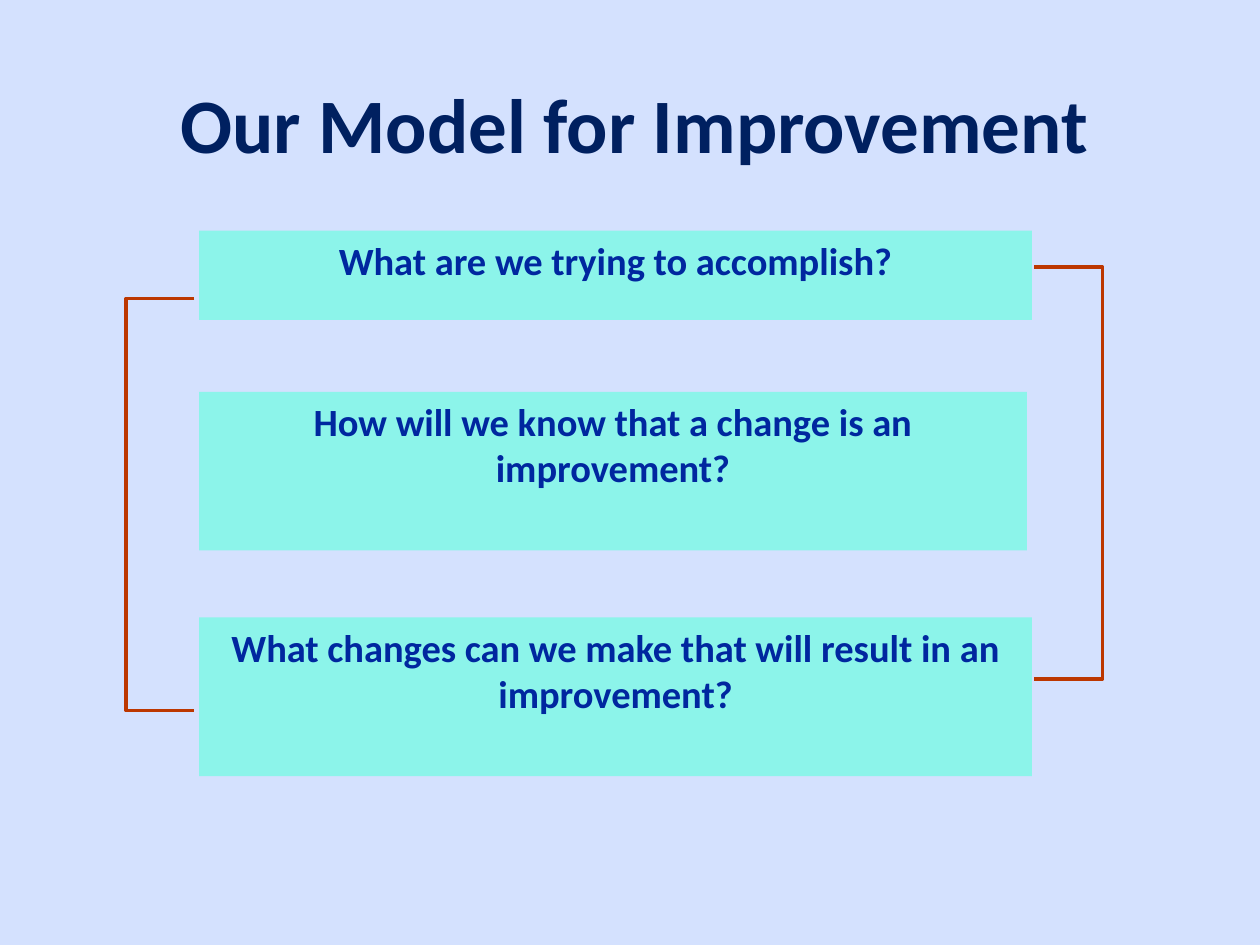
from pptx import Presentation
from pptx.dml.color import RGBColor
from pptx.enum.shapes import MSO_SHAPE
from pptx.enum.text import MSO_ANCHOR, PP_ALIGN
from pptx.util import Inches, Pt

RECT = MSO_SHAPE.RECTANGLE
TOP, MIDDLE = MSO_ANCHOR.TOP, MSO_ANCHOR.MIDDLE
CENTER = PP_ALIGN.CENTER


def color(code):
    return RGBColor.from_string(code)


def write(frame, text, size=22, ink="00279F", font="Calibri", anchor=TOP):
    frame.word_wrap = True
    frame.vertical_anchor = anchor
    para = frame.paragraphs[0]
    para.alignment = CENTER
    run = para.add_run()
    run.text = text
    run.font.name = font
    run.font.size = Pt(size)
    run.font.bold = True
    run.font.color.rgb = color(ink)


class Board:
    back, navy, aqua, rust = "D4E1FE", "002060", "8CF4EA", "BC3700"

    def __init__(self, deck):
        self.slide = deck.slides.add_slide(deck.slide_layouts[6])
        fill = self.slide.background.fill
        fill.solid()
        fill.fore_color.rgb = color(self.back)

    def title(self, text, *place):
        box = self.slide.shapes.add_textbox(*map(Inches, place))
        write(box.text_frame, text, size=44, ink=self.navy, anchor=MIDDLE)

    def panel(self, text, *place):
        box = self.slide.shapes.add_shape(RECT, *map(Inches, place))
        box.shadow.inherit = False
        box.fill.solid()
        box.fill.fore_color.rgb = color(self.aqua)
        box.line.fill.background()
        write(box.text_frame, text)

    def bracket(self, inner, outer, top, height=3.27):
        low = top + height
        points = [(inner, top), (outer, top), (outer, low), (inner, low)]
        start, *rest = [(Inches(x), Inches(y)) for x, y in points]
        pen = self.slide.shapes.build_freeform(*start)
        pen.add_line_segments(rest, close=False)
        shape = pen.convert_to_shape()
        shape.shadow.inherit = False
        shape.fill.background()
        shape.line.color.rgb = color(self.rust)
        shape.line.width = Pt(2)


def main():
    deck = Presentation()
    deck.slide_width, deck.slide_height = Inches(10), Inches(7.5)
    board = Board(deck)

    board.title("Our Model for Improvement", 1, 0.55, 8.08, 0.85)

    # Three questions: top, width, height
    for text, top, width, height in [
        ("What are we trying to accomplish?", 1.83, 6.61, 0.71),
        ("How will we know that a change is an improvement?", 3.11, 6.57, 1.26),
        ("What changes can we make that will result in an improvement?",
         4.9, 6.61, 1.26),
    ]:
        board.panel(text, 1.58, top, width, height)

    # Brackets tying the first question to the last
    board.bracket(1.54, 1, 2.37)
    board.bracket(8.21, 8.75, 2.12)

    deck.save("out.pptx")


if __name__ == "__main__":
    main()
